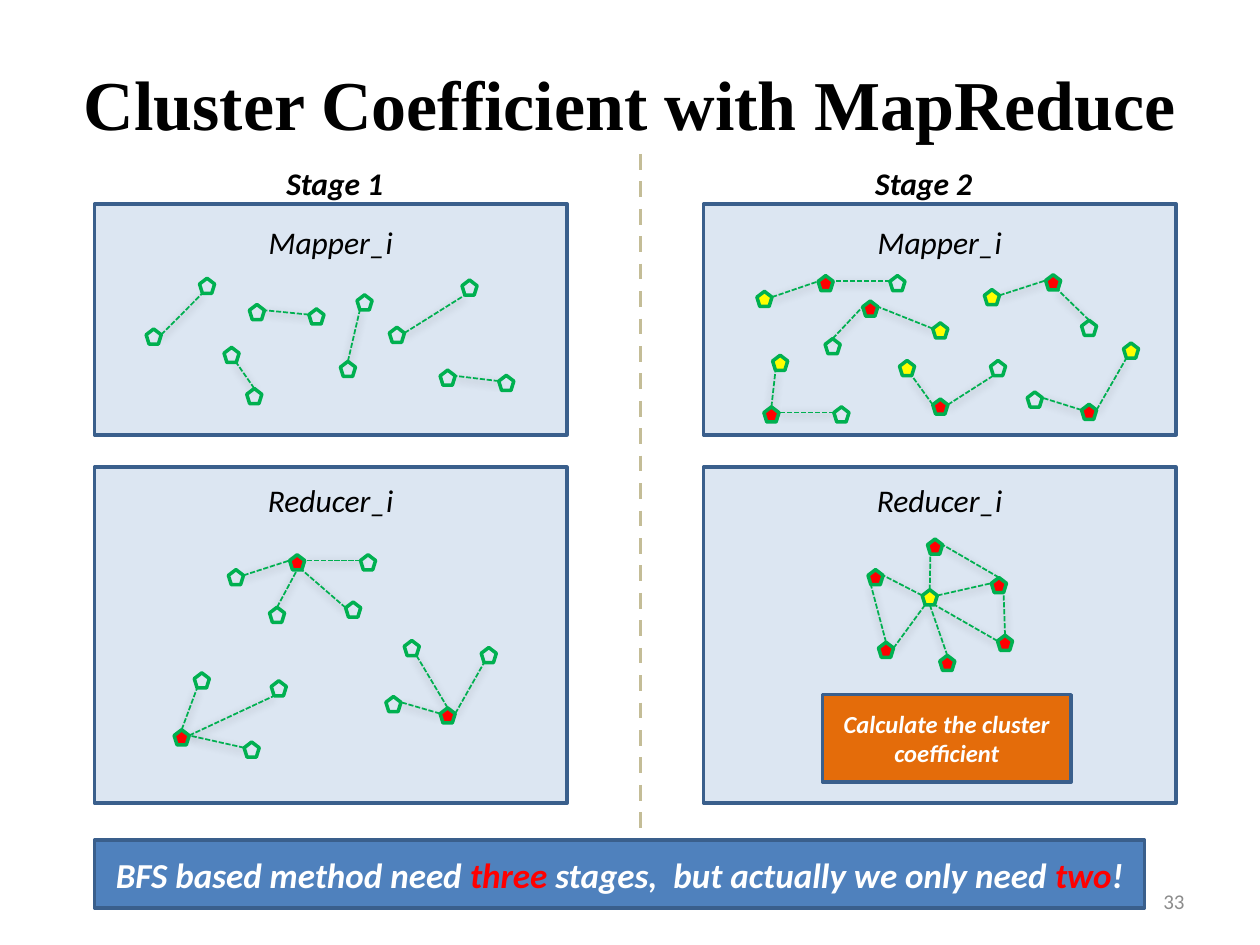
from pptx import Presentation
from pptx.dml.color import RGBColor
from pptx.enum.dml import MSO_LINE as Dash
from pptx.enum.shapes import MSO_CONNECTOR as Conn, MSO_SHAPE as Kind
from pptx.enum.text import MSO_ANCHOR as Anchor, PP_ALIGN as Align
from pptx.oxml import parse_xml
from pptx.oxml.ns import nsdecls
from pptx.util import Pt

HUE = {
    "black": "000000", "white": "FFFFFF", "gray": "8C8C8C", "red": "FF0000",
    "yellow": "FFFF00", "green": "00B050", "pale": "DCE6F2", "blue": "4F81BD",
    "edge": "3A5F8C", "orange": "E46C0A", "tan": "C4BD97",
}
TITLE = "Cluster Coefficient with MapReduce"
STAGES = [("Stage 1", 156.5), ("Stage 2", 493)]
COLS = [54, 402]
ROWS = [("Mapper_i", 116.5, 132, 11), ("Reducer_i", 267, 192, 8)]  # top, height, inset
BUTTON = [("Calculate the cluster coefficient", "white")]
CLAIM = [("BFS based method need ", "white"), ("three", "red"),
         (" stages,  but actually we only need ", "white"),
         ("two", "red"), ("!", "white")]

# Corners of a pentagon where links attach, as shares of its width and height
T, L, R = (0.5, 0), (0, 0.38), (1, 0.38)
BL, B, BR = (0.19, 1), (0.5, 1), (0.81, 1)
SIZE = 8.64
NO, RED, YEL = None, "red", "yellow"

# Each graph: nodes (x, y, fill), then links (node, corner, node, corner)
GRAPHS = [
    # Stage 1 mapper: single links
    ([(83.5, 188, NO), (114, 159, NO)], [(0, R, 1, BL)]),
    ([(141, 222, NO), (128, 198.5, NO)], [(0, T, 1, BR)]),
    ([(222.5, 187, NO), (264, 160, NO)], [(0, R, 1, BL)]),
    ([(176.5, 176.5, NO), (142.5, 174, NO)], [(0, L, 1, R)]),
    ([(194.5, 206.5, NO), (204, 168.5, NO)], [(0, T, 1, BL)]),
    ([(285, 214.5, NO), (251.5, 211.5, NO)], [(0, L, 1, R)]),
    # Stage 1 reducer: stars
    ([(165.5, 317, RED), (130.5, 325.5, NO), (154, 347, NO),
      (197.5, 344, NO), (206, 317, NO)],
     [(1, R, 0, L), (2, T, 0, B), (3, L, 0, BR), (4, L, 0, R)]),
    ([(251.5, 404.5, RED), (231, 366, NO), (275, 370, NO), (220.5, 398, NO)],
     [(0, T, 1, BR), (0, R, 2, BL), (0, L, 3, R)]),
    ([(99.5, 417, RED), (111, 384.5, NO), (139.5, 424, NO), (155, 389, NO)],
     [(0, T, 1, BL), (2, L, 0, R), (0, R, 3, BL)]),
    # Stage 2 mapper: paths through a red node
    ([(467.5, 157.5, RED), (432.5, 166.5, YEL), (508.5, 157.5, NO)],
     [(1, R, 0, L), (2, L, 0, R)]),
    ([(493, 172, RED), (533, 184.5, YEL), (471.5, 193.5, NO)],
     [(1, L, 0, R), (2, T, 0, L)]),
    ([(597.5, 157, RED), (562.5, 165.5, YEL), (618, 183, NO)],
     [(1, R, 0, L), (2, T, 0, BR)]),
    ([(436.5, 232.5, RED), (441.5, 203, YEL), (476.5, 232.5, NO)],
     [(0, T, 1, BL), (2, L, 0, R)]),
    ([(533, 228, RED), (514, 206, YEL), (566, 206, NO)],
     [(0, L, 1, BR), (0, R, 2, BL)]),
    ([(618, 231, RED), (642, 196, YEL), (587, 224, NO)],
     [(0, R, 1, BL), (0, L, 2, R)]),
    # Stage 2 reducer: wheel
    ([(527, 337, YEL), (530, 308, RED), (566.5, 330, RED), (570, 363, RED),
      (537, 374.5, RED), (502, 367, RED), (496, 325.5, RED)],
     [(0, T, 1, BL), (0, R, 2, L), (3, L, 0, BR), (0, B, 4, T), (0, BL, 5, R),
      (0, L, 6, R), (2, T, 1, R), (3, T, 2, BR), (5, T, 6, BL)]),
]
SHADOW = ('<a:outerShdw blurRad="63500" dist="20320" dir="5400000">'
          '<a:srgbClr val="000000"><a:alpha val="32000"/></a:srgbClr>'
          '</a:outerShdw>')

deck = Presentation()
deck.slide_width, deck.slide_height = Pt(720), Pt(540)
slide = deck.slides.add_slide(deck.slide_layouts[5])
shapes = slide.shapes


def rgb(name):
    return RGBColor.from_string(HUE[name])


def write(frame, runs, size, font="Calibri", bold=False, italic=False,
          align=Align.CENTER, anchor=Anchor.MIDDLE):
    """Fill a text frame with one paragraph of (text, colour) runs."""
    frame.word_wrap = True
    frame.vertical_anchor = anchor
    para = frame.paragraphs[0]
    para.alignment = align
    for text, hue in runs:
        run = para.add_run()
        run.text = text
        face = run.font
        face.name, face.size = font, Pt(size)
        face.bold, face.italic = bold, italic
        face.color.rgb = rgb(hue)


def label(box, runs, size, **fmt):
    frame = shapes.add_textbox(*map(Pt, box)).text_frame
    write(frame, runs, size, **fmt)


def block(kind, box, fill, edge):
    shape = shapes.add_shape(kind, *map(Pt, box))
    shape.shadow.inherit = False
    if fill:
        shape.fill.solid()
        shape.fill.fore_color.rgb = rgb(fill)
    else:
        shape.fill.background()
    shape.line.color.rgb = rgb(edge)
    shape.line.width = Pt(2)
    return shape


def panel(box, fill):
    return block(Kind.FLOWCHART_PROCESS, box, fill, "edge").text_frame


def link(start, end, hue, width, dash, effect=""):
    line = shapes.add_connector(Conn.STRAIGHT, *map(Pt, start + end))
    line.line.color.rgb = rgb(hue)
    line.line.width = Pt(width)
    line.line.dash_style = dash
    line._element.spPr.append(parse_xml(
        f"<a:effectLst {nsdecls('a')}>{effect}</a:effectLst>"))


def corner(node, site):
    return tuple(at + SIZE * share for at, share in zip(node, site))


def draw(nodes, links):
    for a, site_a, b, site_b in links:
        link(corner(nodes[a], site_a), corner(nodes[b], site_b),
             "green", 1, Dash.SQUARE_DOT, SHADOW)
    for x, y, fill in nodes:
        block(Kind.REGULAR_PENTAGON, (x, y, SIZE, SIZE), fill, "green")


title = shapes.title
title.left, title.top, title.width, title.height = map(Pt, (36, 21.6, 648, 74))
write(title.text_frame, [(TITLE, "black")], 40, font="Times New Roman", bold=True)
label((516, 500.5, 168, 28.75), [("33", "gray")], 12, align=Align.RIGHT)

for x in COLS:
    for name, top, high, inset in ROWS:
        frame = panel((x, top, 270, high), "pale")
        frame.margin_top = Pt(inset)
        write(frame, [(name, "black")], 18, italic=True, anchor=Anchor.TOP)
for name, x in STAGES:
    label((x, 90, 87, 29), [(name, "black")], 18, bold=True, italic=True,
          align=Align.LEFT, anchor=Anchor.TOP)

write(panel((470, 397, 142, 50), "orange"), BUTTON, 14, bold=True, italic=True)
link((366, 88), (366, 502), "tan", 2.25, Dash.DASH)
write(panel((54, 480, 600, 39), "blue"), CLAIM, 20, bold=True, italic=True)

for nodes, links in GRAPHS:
    draw(nodes, links)

deck.save("out.pptx")
